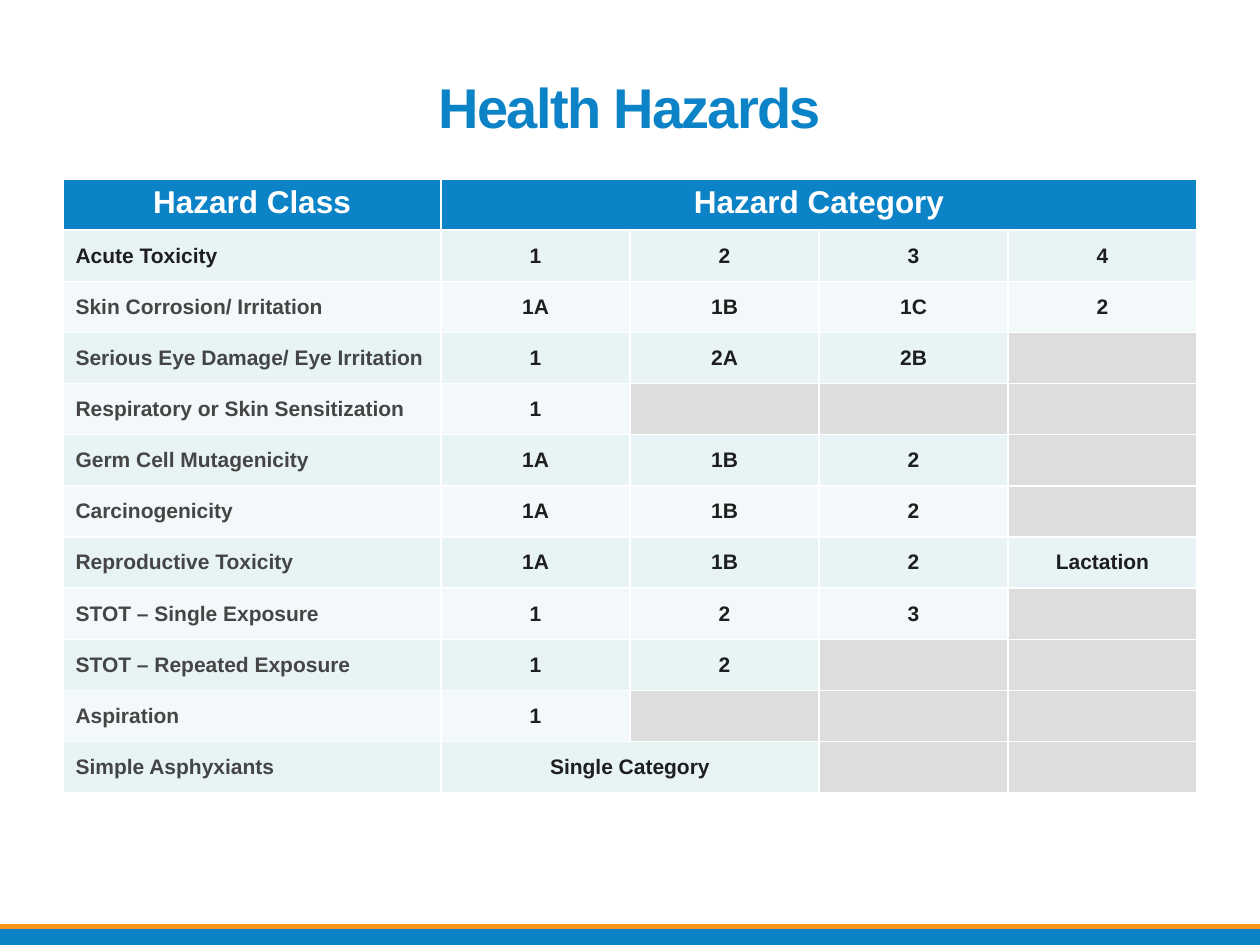
from pptx import Presentation
from pptx import util as u
from pptx.dml.color import RGBColor
from pptx.enum import shapes, text

PX = u.Inches(1) / 126
COLORS = {
    "blue": "0B83C6", "orange": "F99419", "white": "FFFFFF",
    "dark": "1E1E1E", "slate": "454545", "blocked": "DDDDDD",
    "odd": "E7F3F4", "even": "F3F9FA",
}
HAZARDS = [
    ("Acute Toxicity", "1", "2", "3", "4"),
    ("Skin Corrosion/ Irritation", "1A", "1B", "1C", "2"),
    ("Serious Eye Damage/ Eye Irritation", "1", "2A", "2B"),
    ("Respiratory or Skin Sensitization", "1"),
    ("Germ Cell Mutagenicity", "1A", "1B", "2"),
    ("Carcinogenicity", "1A", "1B", "2"),
    ("Reproductive Toxicity", "1A", "1B", "2", "Lactation"),
    ("STOT – Single Exposure", "1", "2", "3"),
    ("STOT – Repeated Exposure", "1", "2"),
    ("Aspiration", "1"),
    ("Simple Asphyxiants", "Single Category"),
]
COLUMN_WIDTHS = [378, 189, 189, 189, 189]


def px(length):
    return u.Emu(round(length * PX))


def color(name):
    return RGBColor.from_string(COLORS[name])


def write(frame, words, size=12, ink="dark", align="CENTER", spacing=None):
    line = frame.paragraphs[0]
    line.alignment = text.PP_ALIGN[align]
    run = line.add_run()
    run.text = words
    run.font.name = "Arial"
    run.font.size = u.Pt(size)
    run.font.bold = True
    run.font.color.rgb = color(ink)
    if spacing is not None:
        run.font._element.set("spc", str(spacing))


class HazardSlide:
    def __init__(self, deck):
        self.slide = deck.slides.add_slide(deck.slide_layouts[5])

    def title(self, words, box):
        heading = self.slide.shapes.title
        heading.left, heading.top, heading.width, heading.height = map(px, box)
        heading.text_frame.auto_size = text.MSO_AUTO_SIZE.NONE
        heading.text_frame.vertical_anchor = text.MSO_ANCHOR.BOTTOM
        write(heading.text_frame, words, size=32, ink="blue", spacing=-100)

    def band(self, fill, box):
        stripe = self.slide.shapes.add_shape(shapes.MSO_SHAPE.RECTANGLE, *map(px, box))
        stripe.shadow.inherit = False
        stripe.fill.solid()
        stripe.fill.fore_color.rgb = color(fill)
        stripe.line.fill.background()

    def cell(self, cell, fill, words="", anchor="MIDDLE", **style):
        cell.fill.solid()
        cell.fill.fore_color.rgb = color(fill)
        if words:
            cell.vertical_anchor = text.MSO_ANCHOR[anchor]
            write(cell.text_frame, words, **style)

    def hazard_table(self, box):
        grid = self.slide.shapes.add_table(
            len(HAZARDS) + 1, len(COLUMN_WIDTHS), *map(px, box)).table
        for column, width in zip(grid.columns, COLUMN_WIDTHS):
            column.width = px(width)
        last_row = len(HAZARDS)
        grid.cell(0, 1).merge(grid.cell(0, 4))
        grid.cell(last_row, 1).merge(grid.cell(last_row, 2))

        for index, heading in enumerate(("Hazard Class", "Hazard Category")):
            self.cell(grid.cell(0, index), "blue", heading, size=18, ink="white", anchor="TOP")
        for row, (hazard, *categories) in enumerate(HAZARDS, 1):
            shade = "odd" if row % 2 else "even"
            self.cell(grid.cell(row, 0), shade, hazard, align="LEFT",
                      ink="dark" if row == 1 else "slate")
            for column in range(1, len(COLUMN_WIDTHS)):
                if column <= len(categories):
                    self.cell(grid.cell(row, column), shade, categories[column - 1])
                elif not grid.cell(row, column).is_spanned:
                    self.cell(grid.cell(row, column), "blocked")


def main():
    deck = Presentation()
    deck.slide_width, deck.slide_height = px(1260), px(945)
    page = HazardSlide(deck)
    page.band("blue", (0, 924, 1260, 21))
    page.band("orange", (0, 924, 1260, 5))
    page.title("Health Hazards", (63, 73, 1134, 73))
    page.hazard_table((63, 179, 1134, 614))
    deck.save("out.pptx")


if __name__ == "__main__":
    main()
